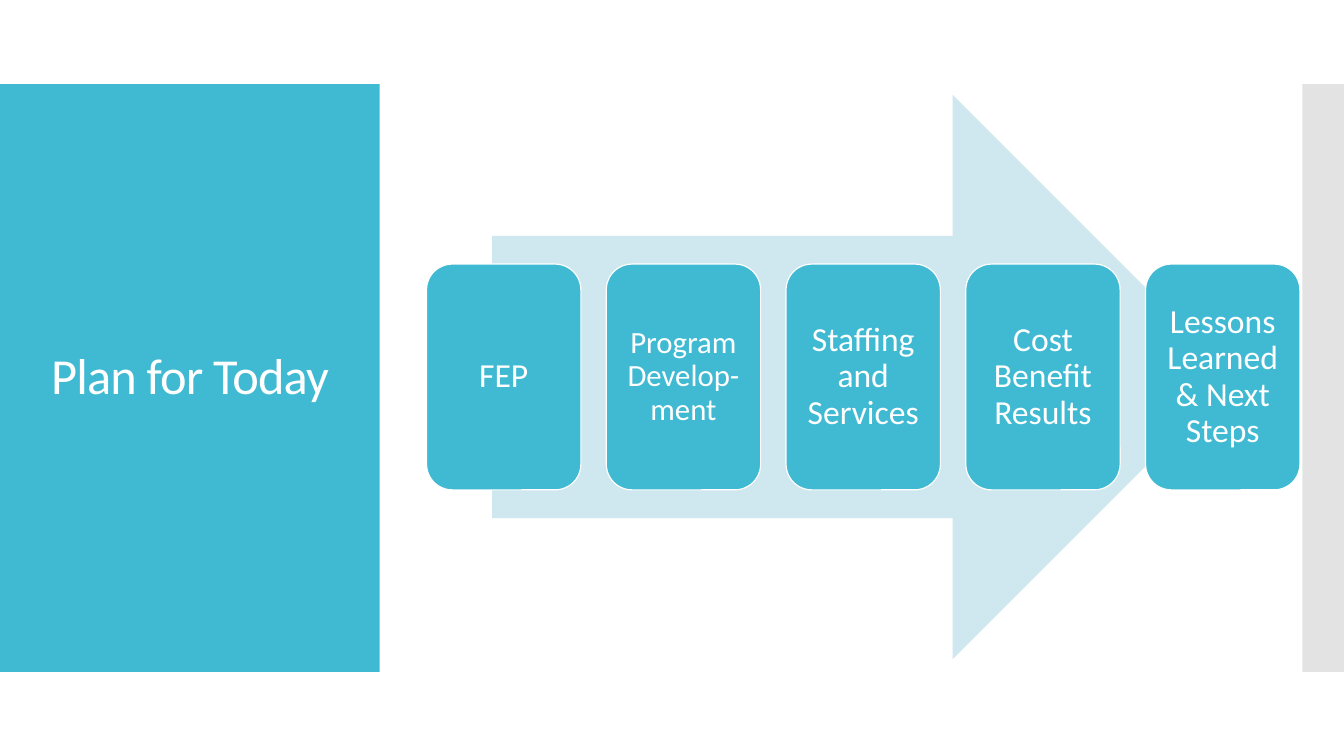
from pptx import Presentation
from pptx.dml.color import RGBColor
from pptx.enum.shapes import MSO_SHAPE
from pptx.enum.text import MSO_ANCHOR, MSO_AUTO_SIZE, PP_ALIGN
from pptx.util import Cm, Pt

TITLE = "Plan for Today"
STEPS = [
    ("FEP", 24),
    ("Program Develop-ment", 22),
    ("Staffing and Services", 24),
    ("Cost Benefit Results", 24),
    ("Lessons Learned & Next Steps", 24),
]

TEAL = RGBColor(0x40, 0xBA, 0xD2)
PALE_TEAL = RGBColor(0xCF, 0xE7, 0xEE)
GRAY = RGBColor(0xE3, 0xE3, 0xE3)
WHITE = RGBColor(0xFF, 0xFF, 0xFF)
FONT = "Calibri"

SLIDE_WIDTH, SLIDE_HEIGHT = 33.87, 19.05
BAND_TOP, BAND_HEIGHT = 2.12, 14.81
PANEL_WIDTH, STRIP_WIDTH = 9.57, 1.05
ARROW = (12.4, 2.39, 18.72, 14.22)
STEP_LEFT, STEP_PITCH = 10.75, 4.53
STEP_WIDTH, STEP_HEIGHT = 3.89, 5.69
STEP_TOP = ARROW[1] + (ARROW[3] - STEP_HEIGHT) / 2


def add_block(slide, kind, box, color, outline=None):
    shape = slide.shapes.add_shape(kind, *map(Cm, box))
    shape.shadow.inherit = False
    shape.fill.solid()
    shape.fill.fore_color.rgb = color
    if outline is None:
        shape.line.fill.background()
    else:
        shape.line.color.rgb = outline
        shape.line.width = Pt(0.85)
    return shape


def write_text(shape, text, size, margin=0.25, tracking=0):
    frame = shape.text_frame
    frame.word_wrap = True
    frame.auto_size = MSO_AUTO_SIZE.NONE
    frame.vertical_anchor = MSO_ANCHOR.MIDDLE
    frame.margin_left = frame.margin_right = Cm(margin)
    frame.margin_top = frame.margin_bottom = Cm(margin)
    paragraph = frame.paragraphs[0]
    paragraph.alignment = PP_ALIGN.CENTER
    paragraph.line_spacing = 0.9
    run = paragraph.add_run()
    run.text = text
    run.font.name = FONT
    run.font.size = Pt(size)
    run.font.color.rgb = WHITE
    if tracking:
        run._r.get_or_add_rPr().set("spc", str(tracking))


def main():
    presentation = Presentation()
    presentation.slide_width = Cm(SLIDE_WIDTH)
    presentation.slide_height = Cm(SLIDE_HEIGHT)
    slide = presentation.slides.add_slide(presentation.slide_layouts[5])

    add_block(slide, MSO_SHAPE.RECTANGLE, (0, BAND_TOP, PANEL_WIDTH, BAND_HEIGHT), TEAL)
    strip_left = SLIDE_WIDTH - STRIP_WIDTH
    add_block(slide, MSO_SHAPE.RECTANGLE, (strip_left, BAND_TOP, STRIP_WIDTH, BAND_HEIGHT), GRAY)

    title = slide.shapes.title
    title.left, title.top, title.width, title.height = map(Cm, (0.7, 3.13, 8.18, 12.78))
    write_text(title, TITLE, 36, tracking=-60)
    slide.shapes._spTree.append(title._element)

    add_block(slide, MSO_SHAPE.RIGHT_ARROW, ARROW, PALE_TEAL)
    for index, (label, size) in enumerate(STEPS):
        box = (STEP_LEFT + index * STEP_PITCH, STEP_TOP, STEP_WIDTH, STEP_HEIGHT)
        step = add_block(slide, MSO_SHAPE.ROUNDED_RECTANGLE, box, TEAL, outline=WHITE)
        write_text(step, label, size)

    presentation.save("out.pptx")


if __name__ == "__main__":
    main()
